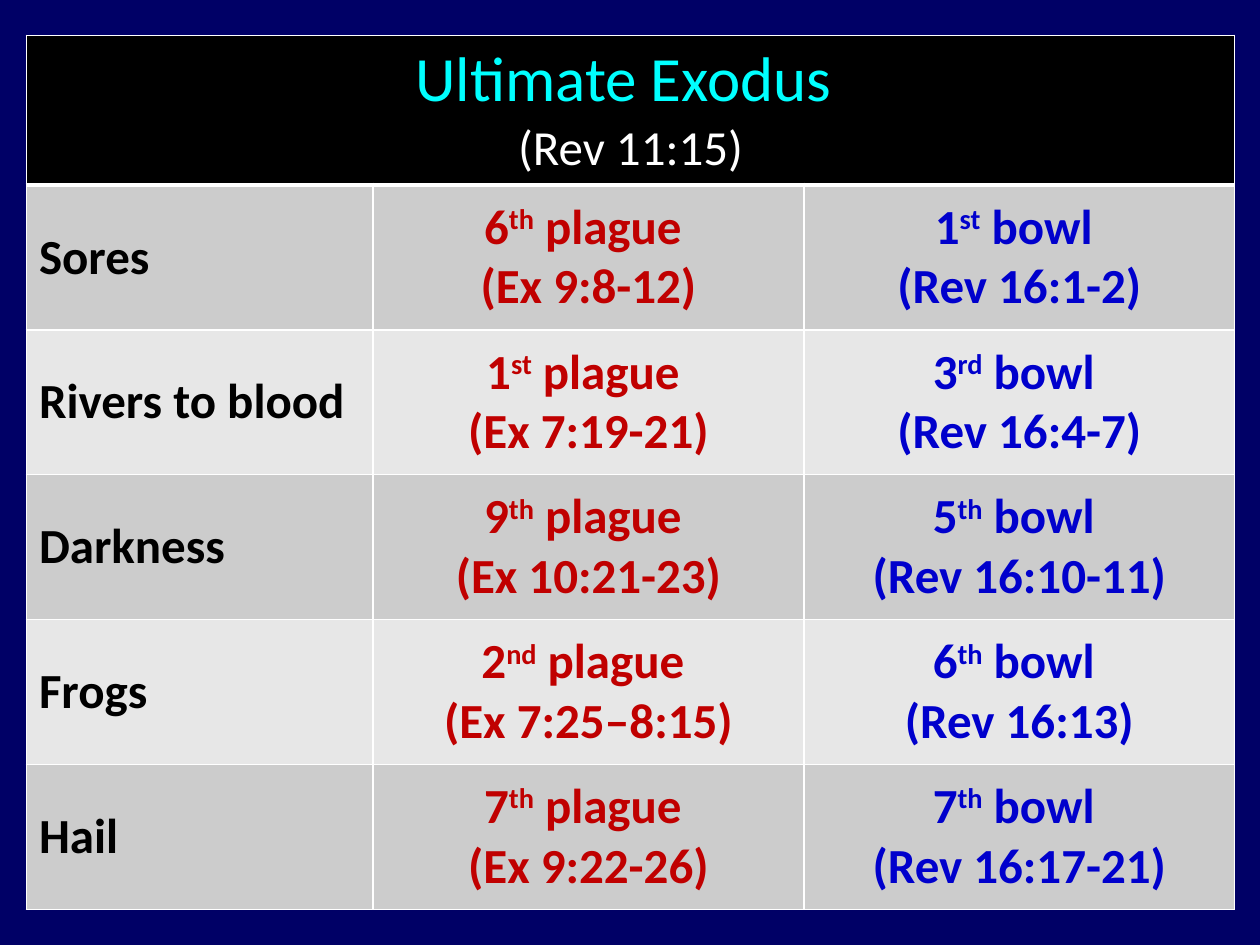
from lxml.etree import SubElement
from pptx import Presentation
from pptx.dml.color import RGBColor
from pptx.enum.text import MSO_ANCHOR, PP_ALIGN
from pptx.oxml.ns import qn
from pptx.util import Inches, Pt

# Content
TITLE, TITLE_VERSE = "Ultimate Exodus ", "(Rev 11:15)"
# judgment, (plague number, suffix, verse), (bowl number, suffix, verse)
JUDGMENTS = [
    ("Sores", ("6", "th", "(Ex 9:8-12)"), ("1", "st", "(Rev 16:1-2)")),
    ("Rivers to blood", ("1", "st", "(Ex 7:19-21)"), ("3", "rd", "(Rev 16:4-7)")),
    ("Darkness", ("9", "th", "(Ex 10:21-23)"), ("5", "th", "(Rev 16:10-11)")),
    ("Frogs", ("2", "nd", "(Ex 7:25‒8:15)"), ("6", "th", "(Rev 16:13)")),
    ("Hail", ("7", "th", "(Ex 9:22-26)"), ("7", "th", "(Rev 16:17-21)")),
]
COLORS = {
    "background": "000066", "header": "000000", "title": "00FFFF",
    "verse": "FFFFFF", "judgment": "000000", "plague": "C00000",
    "bowl": "0000CC", "border": "FFFFFF", "odd": "CCCCCC", "even": "E7E7E7",
}
FONT, TITLE_SIZE, BODY_SIZE = "Calibri", 36, 28
LEFT, TOP, ROW_HEIGHT = 0.21, 0.28, 1.15
COLUMN_WIDTHS = (2.75, 3.42, 3.42)


def color(name):
    return RGBColor.from_string(COLORS[name])


def style(run, color_name, size=BODY_SIZE, bold=True):
    run.font.name, run.font.size, run.font.bold = FONT, Pt(size), bold
    run.font.color.rgb = color(color_name)


def paint(cell, fill_name, bottom=1, top=1):
    """Give the cell its white borders, then its fill."""
    properties = cell._tc.get_or_add_tcPr()
    for side, width in (("L", 1), ("R", 1), ("T", top), ("B", bottom)):
        line = SubElement(properties, qn(f"a:ln{side}"), w=str(Pt(width)))
        solid = SubElement(line, qn("a:solidFill"))
        SubElement(solid, qn("a:srgbClr"), val=COLORS["border"])
    cell.fill.solid()
    cell.fill.fore_color.rgb = color(fill_name)


def write_event(cell, kind, number, suffix, verse):
    """Write an ordinal with a raised suffix above its verse."""
    ordinal = cell.text_frame.paragraphs[0]
    reference = cell.text_frame.add_paragraph()
    for text in (number, suffix, f" {kind} "):
        ordinal.add_run().text = text
    reference.text = verse
    for paragraph in (ordinal, reference):
        paragraph.alignment = PP_ALIGN.CENTER
        for run in paragraph.runs:
            style(run, kind)
    ordinal.runs[1]._r.get_or_add_rPr().set("baseline", "30000")


# Slide
deck = Presentation()
deck.slide_width, deck.slide_height = Inches(10), Inches(7.5)
slide = deck.slides.add_slide(deck.slide_layouts[6])
slide.background.fill.solid()
slide.background.fill.fore_color.rgb = color("background")

# Table grid
row_count = len(JUDGMENTS) + 1
table = slide.shapes.add_table(
    row_count, len(COLUMN_WIDTHS), Inches(LEFT), Inches(TOP),
    Inches(sum(COLUMN_WIDTHS)), Inches(ROW_HEIGHT * row_count)).table
for column, width in zip(table.columns, COLUMN_WIDTHS):
    column.width = Inches(width)
for row in table.rows:
    row.height = Inches(ROW_HEIGHT)

# Header
header = table.cell(0, 0)
header.merge(table.cell(0, len(COLUMN_WIDTHS) - 1))
for cell in table.rows[0].cells:
    paint(cell, "header", bottom=3)
heading = header.text_frame.paragraphs[0]
heading.text = f"{TITLE}\v{TITLE_VERSE}"
heading.alignment = PP_ALIGN.CENTER
style(heading.runs[0], "title", TITLE_SIZE, bold=False)
style(heading.runs[1], "verse", bold=False)

# Judgments
for index, (judgment, plague, bowl) in enumerate(JUDGMENTS, start=1):
    cells = list(table.rows[index].cells)
    for cell in cells:
        paint(cell, "odd" if index % 2 else "even", top=3 if index == 1 else 1)
        cell.vertical_anchor = MSO_ANCHOR.MIDDLE
    cells[0].text_frame.text = judgment
    style(cells[0].text_frame.paragraphs[0].runs[0], "judgment")
    write_event(cells[1], "plague", *plague)
    write_event(cells[2], "bowl", *bowl)

deck.save("out.pptx")
